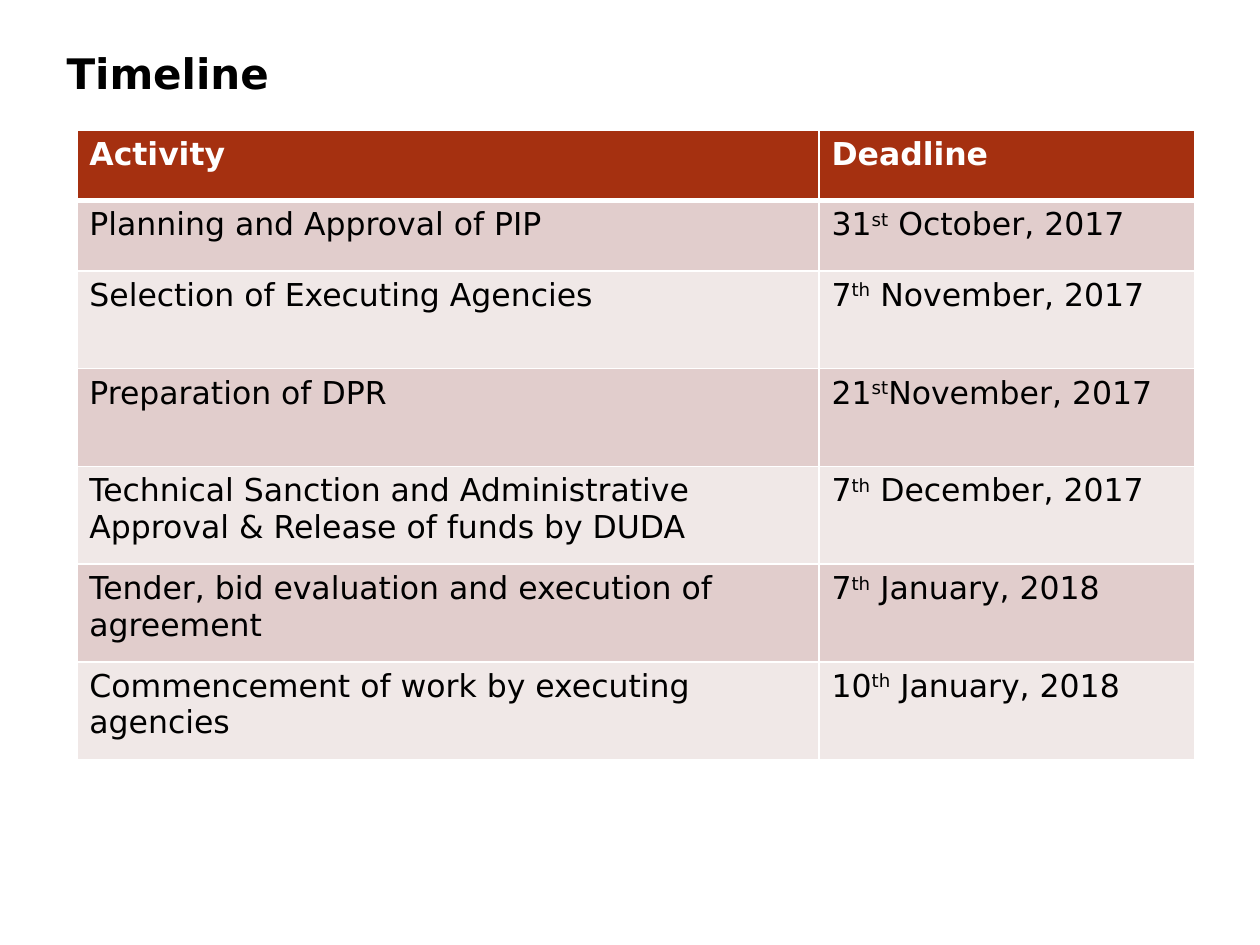
import lxml.etree
import pptx
import pptx.dml.color
import pptx.enum.text
import pptx.oxml.ns
import pptx.util

Inches = pptx.util.Inches
RGBColor = pptx.dml.color.RGBColor

BLACK = RGBColor(0x00, 0x00, 0x00)
WHITE = RGBColor(0xFF, 0xFF, 0xFF)
RUST = RGBColor(0xA5, 0x30, 0x10)
ROSE = RGBColor(0xE1, 0xCD, 0xCC)
PALE_ROSE = RGBColor(0xF0, 0xE8, 0xE7)

FONT = "DejaVu Sans"
BLANK_LAYOUT = 6

HEADINGS = ("Activity", "Deadline")
# Each deadline is split into day, ordinal suffix and the rest.
MILESTONES = [
    ("Planning and Approval of PIP", ("31", "st", " October, 2017")),
    ("Selection of Executing Agencies", ("7", "th", " November, 2017")),
    ("Preparation of DPR", ("21", "st", "November, 2017")),
    ("Technical Sanction and Administrative Approval & Release of funds by DUDA",
     ("7", "th", " December, 2017")),
    ("Tender, bid evaluation and execution of agreement",
     ("7", "th", " January, 2018")),
    ("Commencement of work by executing agencies",
     ("10", "th", " January, 2018")),
]


def add_text(paragraph, text, size=18, color=BLACK, bold=False, superscript=False):
    run = paragraph.add_run()
    run.text = text
    font = run.font
    font.name = FONT
    font.size = pptx.util.Pt(size)
    font.bold = bold
    font.color.rgb = color
    if superscript:
        run._r.get_or_add_rPr().set("baseline", "30000")


def set_borders(cell, top=1, bottom=1):
    """Draw white cell borders, with widths in points."""
    properties = cell._tc.get_or_add_tcPr()
    qualified = pptx.oxml.ns.qn
    for side, width in (("L", 1), ("R", 1), ("T", top), ("B", bottom)):
        line = lxml.etree.SubElement(properties, qualified(f"a:ln{side}"),
                                     w=str(pptx.util.Pt(width)))
        fill = lxml.etree.SubElement(line, qualified("a:solidFill"))
        lxml.etree.SubElement(fill, qualified("a:srgbClr"), val=str(WHITE))


def style_cell(cell, color, **borders):
    set_borders(cell, **borders)
    cell.fill.solid()
    cell.fill.fore_color.rgb = color


def add_title(slide, left, top, width, height):
    text_frame = slide.shapes.add_textbox(left, top, width, height).text_frame
    text_frame.word_wrap = True
    text_frame.vertical_anchor = pptx.enum.text.MSO_ANCHOR.MIDDLE
    add_text(text_frame.paragraphs[0], "Timeline", size=24, bold=True)


def add_timeline_table(slide, left, top, width, height):
    row_count = len(MILESTONES) + 1
    table = slide.shapes.add_table(row_count, len(HEADINGS),
                                   left, top, width, height).table
    table.columns[0].width = Inches(5.89)
    table.columns[1].width = width - Inches(5.89)

    short_rows = 2
    short_height = Inches(0.56)
    tall_height = (height - short_rows * short_height) // (row_count - short_rows)
    for index, row in enumerate(table.rows):
        row.height = short_height if index < short_rows else tall_height

    for column, heading in enumerate(HEADINGS):
        cell = table.cell(0, column)
        style_cell(cell, RUST, bottom=3)
        add_text(cell.text_frame.paragraphs[0], heading, color=WHITE, bold=True)

    for row, (activity, (day, suffix, month)) in enumerate(MILESTONES, start=1):
        activity_cell, deadline_cell = table.cell(row, 0), table.cell(row, 1)
        for cell in (activity_cell, deadline_cell):
            style_cell(cell, ROSE if row % 2 else PALE_ROSE,
                       top=3 if row == 1 else 1)
        add_text(activity_cell.text_frame.paragraphs[0], activity)
        deadline = deadline_cell.text_frame.paragraphs[0]
        add_text(deadline, day)
        add_text(deadline, suffix, superscript=True)
        add_text(deadline, month)


def main():
    presentation = pptx.Presentation()
    presentation.slide_width = Inches(10)
    presentation.slide_height = Inches(7.5)
    slide = presentation.slides.add_slide(presentation.slide_layouts[BLANK_LAYOUT])
    add_title(slide, Inches(0.43), Inches(0.32), Inches(9.13), Inches(0.51))
    add_timeline_table(slide, Inches(0.61), Inches(1.03), Inches(8.87), Inches(5))
    presentation.save("out.pptx")


if __name__ == "__main__":
    main()
